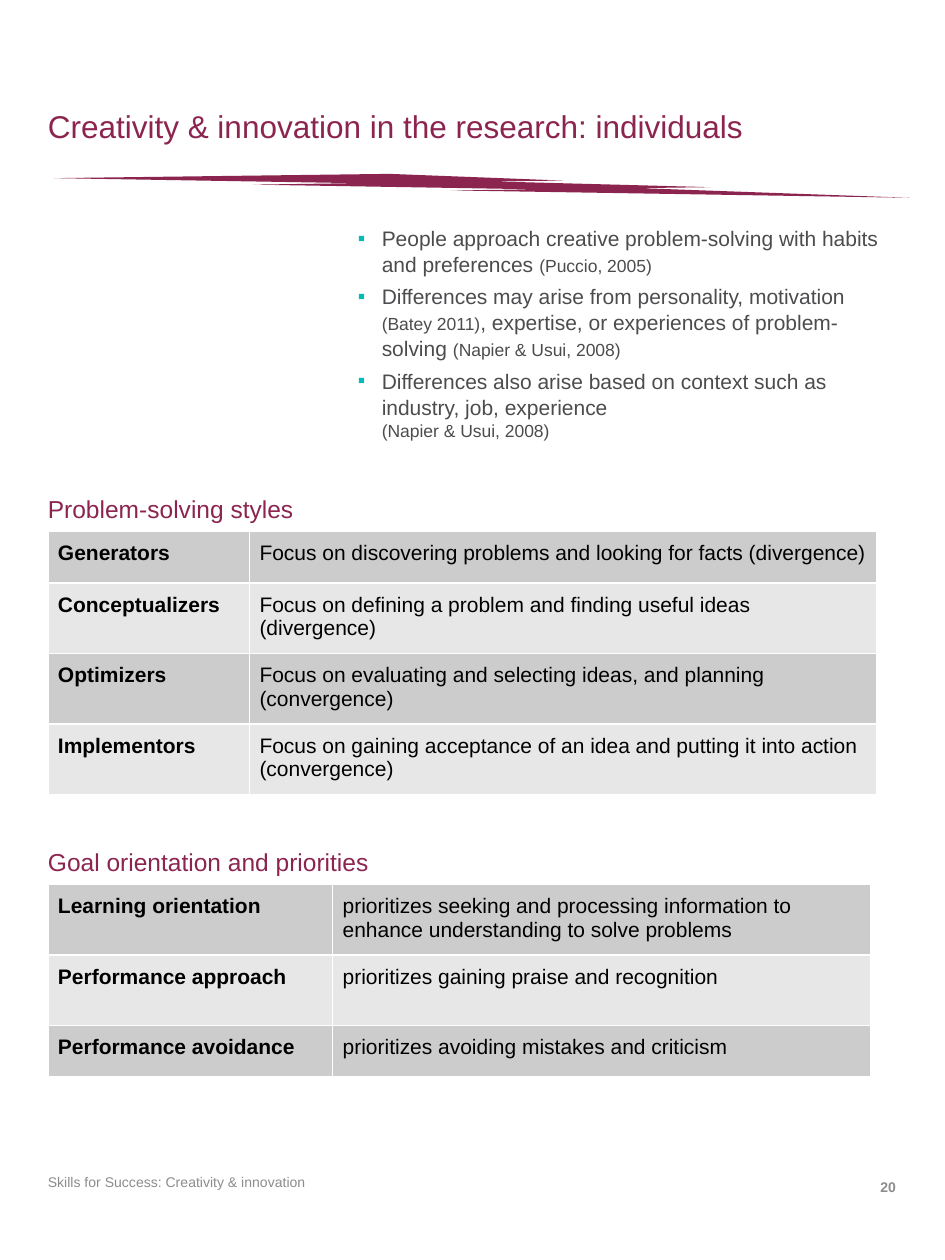
from dataclasses import dataclass
from typing import Optional

from lxml import etree
from pptx import Presentation
from pptx.dml.color import RGBColor
from pptx.enum.shapes import MSO_SHAPE
from pptx.enum.text import MSO_ANCHOR, PP_ALIGN
from pptx.oxml.ns import qn
from pptx.util import Inches, Pt

BOLT = MSO_SHAPE.LIGHTNING_BOLT
TOP, MIDDLE = MSO_ANCHOR.TOP, MSO_ANCHOR.MIDDLE
LEFT, RIGHT = PP_ALIGN.LEFT, PP_ALIGN.RIGHT

FONT = "Arial"
PLUM, TEAL, INK, GREY = "8B254F", "00BCB4", "4C4C4F", "8C8C8C"
BLACK, WHITE = "000000", "FFFFFF"
BANDS = ("CCCCCC", "E7E7E7")

# The page is a grid of 100 columns by 100 rows.
PAGE_WIDTH, PAGE_HEIGHT = Inches(7.5), Inches(10)
MARGIN = 5.07
ONE_LINE, TWO_LINES = 4.07, 5.57  # table row heights


@dataclass(frozen=True)
class Area:
    left: float
    top: float
    width: float
    height: float

    def lengths(self) -> tuple:
        return (columns(self.left), rows(self.top),
                columns(self.width), rows(self.height))


@dataclass(frozen=True)
class Label:
    area: Area
    text: str
    size: float
    color: str = PLUM
    bold: bool = False
    align: PP_ALIGN = LEFT
    line_spacing: Optional[float] = None


@dataclass(frozen=True)
class StyleTable:
    top: float
    widths: tuple
    heights: tuple
    entries: tuple


LABELS = (
    Label(Area(MARGIN, 5.5, 89.87, 9.4),
          "Creativity & innovation in the research: individuals", 18, line_spacing=0.9),
    Label(Area(MARGIN, 37, 35.6, 7.1), "Problem-solving styles", 14, line_spacing=0.9),
    Label(Area(MARGIN, 65, 62.4, 7.1), "Goal orientation and priorities", 14,
          line_spacing=0.9),
    Label(Area(MARGIN, 92, 33.73, 3.6), "Skills for Success: Creativity & innovation", 8, GREY),
    Label(Area(84.4, 92.7, 10.4, 3), "20", 8, GREY, True, RIGHT),
)

# Each point is a list of (text, size); None is a line break.
POINTS = (
    (("People approach creative problem-solving with habits and preferences ", 12),
     ("(Puccio, 2005)", 10)),
    (("Differences may arise from personality, motivation ", 12),
     ("(Batey 2011)", 10),
     (", expertise, or experiences of problem-solving ", 12),
     ("(Napier & Usui, 2008)", 10)),
    (("Differences also arise based on context such as industry, job, experience", 12),
     None,
     ("(Napier & Usui, 2008)", 10)),
)

TABLES = (
    StyleTable(42.2, (21.33, 66.4), (ONE_LINE, TWO_LINES, TWO_LINES, TWO_LINES), (
        ("Generators", "Focus on discovering problems and looking for facts (divergence)"),
        ("Conceptualizers", "Focus on defining a problem and finding useful ideas (divergence)"),
        ("Optimizers", "Focus on evaluating and selecting ideas, and planning (convergence)"),
        ("Implementors",
         "Focus on gaining acceptance of an idea and putting it into action (convergence)"),
    )),
    StyleTable(70.2, (30.13, 56.93), (TWO_LINES, TWO_LINES, ONE_LINE), (
        ("Learning orientation",
         "prioritizes seeking and processing information to enhance understanding "
         "to solve problems"),
        ("Performance approach", "prioritizes gaining praise and recognition"),
        ("Performance avoidance", "prioritizes avoiding mistakes and criticism"),
    )),
)


def columns(count: float) -> int:
    return round(PAGE_WIDTH * count / 100)


def rows(count: float) -> int:
    return round(PAGE_HEIGHT * count / 100)


def rgb(color: str) -> RGBColor:
    return RGBColor.from_string(color)


def set_font(font, size: float, color: str, bold: bool = False) -> None:
    font.name, font.size, font.bold = FONT, Pt(size), bold
    font.color.rgb = rgb(color)


def add_frame(page, area: Area, anchor: MSO_ANCHOR):
    """Add a wrapping text box without insets and return its text frame."""
    frame = page.shapes.add_textbox(*area.lengths()).text_frame
    frame.word_wrap = True
    frame.vertical_anchor = anchor
    frame.margin_left = frame.margin_right = frame.margin_top = frame.margin_bottom = 0
    return frame


def draw_label(page, label: Label) -> None:
    para = add_frame(page, label.area, MIDDLE).paragraphs[0]
    para.text = label.text
    para.alignment = label.align
    para.line_spacing = label.line_spacing
    set_font(para.font, label.size, label.color, label.bold)


def draw_bolt(page, area: Area) -> None:
    bolt = page.shapes.add_shape(BOLT, *area.lengths())
    bolt.shadow.inherit = False
    bolt.fill.solid()
    bolt.fill.fore_color.rgb = rgb(PLUM)
    bolt.line.fill.background()


def add_bullet(para) -> None:
    properties = para._p.get_or_add_pPr()
    properties.set("marL", str(Inches(0.25)))
    properties.set("indent", str(Inches(-0.19)))
    color = etree.SubElement(properties, qn("a:buClr"))
    etree.SubElement(color, qn("a:srgbClr"), val=TEAL)
    etree.SubElement(properties, qn("a:buFont"), typeface=FONT)
    etree.SubElement(properties, qn("a:buChar"), char="▪")


def draw_points(page, area: Area) -> None:
    frame = add_frame(page, area, TOP)
    for index, point in enumerate(POINTS):
        para = frame.add_paragraph() if index else frame.paragraphs[0]
        add_bullet(para)
        para.line_spacing = 1.04
        para.space_before = Pt(1.7 if index else 0)
        para.space_after = Pt(1.7)
        for part in point:
            if part is None:
                para.add_line_break()
                continue
            span = para.add_run()
            span.text = part[0]
            set_font(span.font, part[1], INK)


def add_borders(cell) -> None:
    properties = cell._tc.get_or_add_tcPr()
    for index, side in enumerate(("lnL", "lnR", "lnT", "lnB")):
        line = etree.Element(qn(f"a:{side}"), w=str(Pt(1)))
        fill = etree.SubElement(line, qn("a:solidFill"))
        etree.SubElement(fill, qn("a:srgbClr"), val=WHITE)
        properties.insert(index, line)


def draw_table(page, content: StyleTable) -> None:
    area = Area(MARGIN, content.top, sum(content.widths), sum(content.heights))
    table = page.shapes.add_table(
        len(content.heights), len(content.widths), *area.lengths()).table
    for column, width in zip(table.columns, content.widths):
        column.width = columns(width)
    for index, (row, height) in enumerate(zip(table.rows, content.heights)):
        row.height = rows(height)
        for position, (cell, text) in enumerate(zip(row.cells, content.entries[index])):
            cell.margin_left = cell.margin_right = Inches(0.08)
            cell.margin_top = cell.margin_bottom = Inches(0.08)
            cell.fill.solid()
            cell.fill.fore_color.rgb = rgb(BANDS[index % 2])
            add_borders(cell)
            para = cell.text_frame.paragraphs[0]
            para.text = text
            set_font(para.font, 12, BLACK, bold=position == 0)


def main() -> None:
    deck = Presentation()
    deck.slide_width, deck.slide_height = PAGE_WIDTH, PAGE_HEIGHT
    page = deck.slides.add_slide(deck.slide_layouts[6])
    draw_bolt(page, Area(5.73, 13.8, 90.53, 1.9))
    draw_points(page, Area(37.07, 17.8, 56, 16.9))
    for content in TABLES:
        draw_table(page, content)
    for label in LABELS:
        draw_label(page, label)
    deck.save("out.pptx")


if __name__ == "__main__":
    main()
